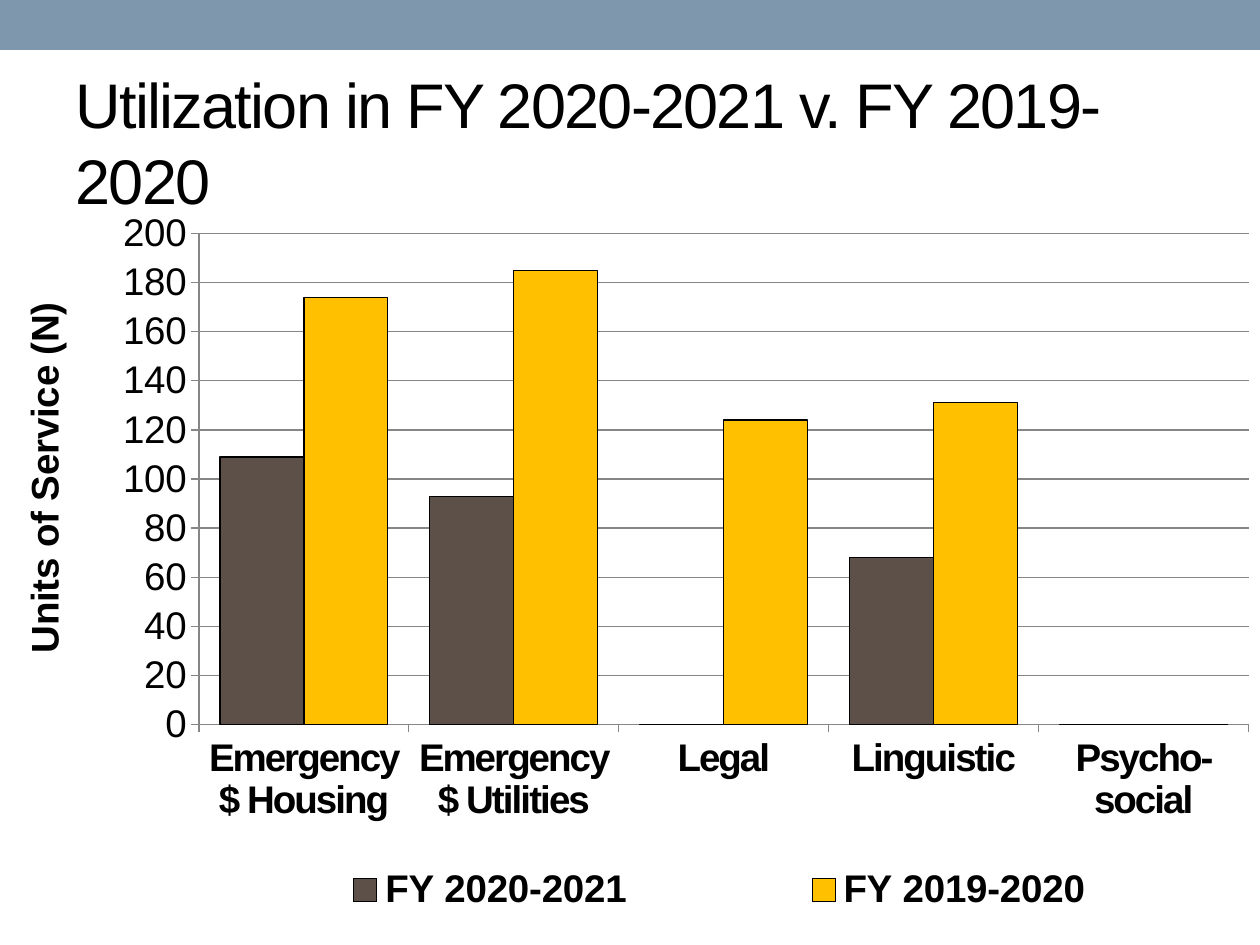
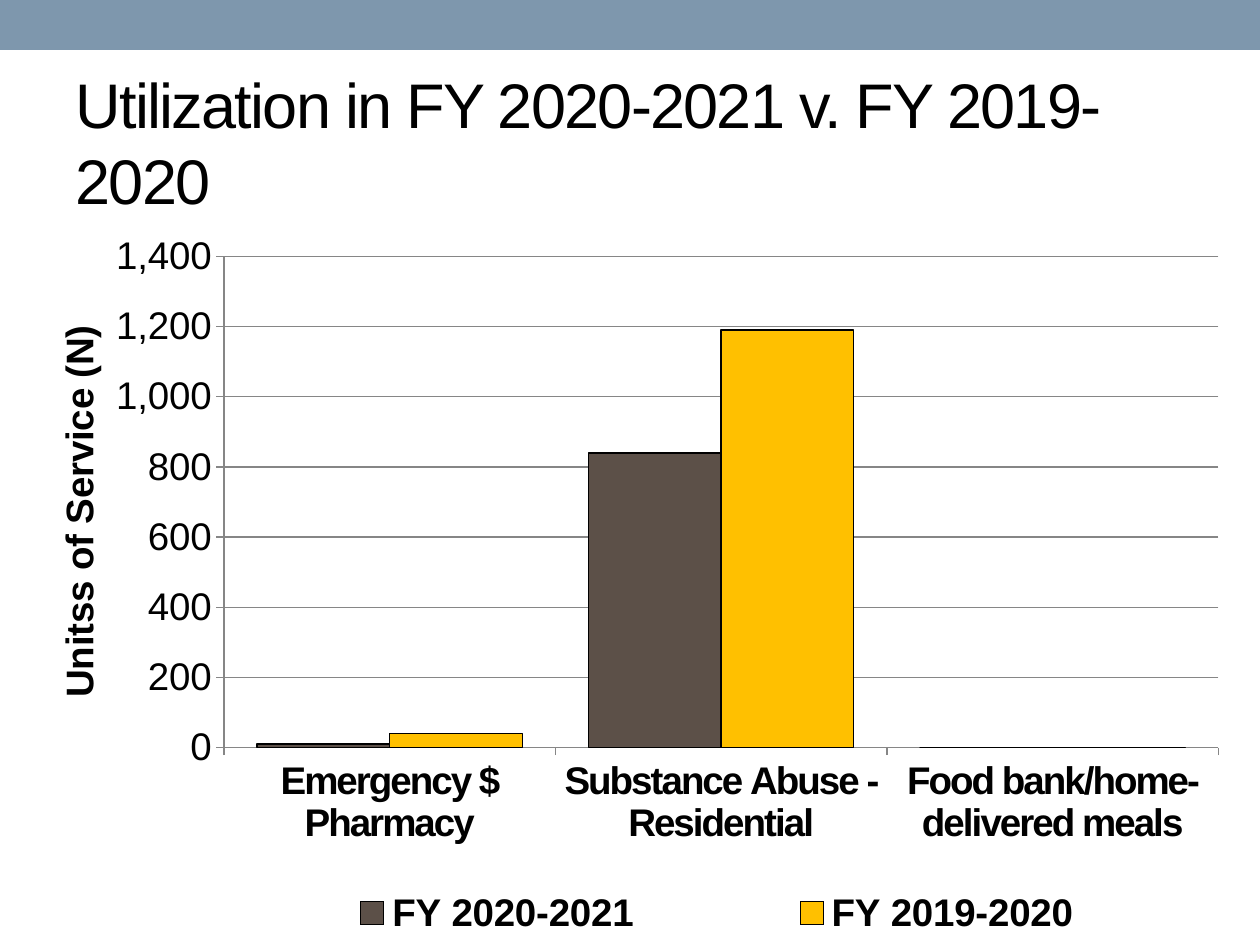
"""Builds two slides that compare service utilization across two fiscal years."""
import pptx
import pptx.chart.data
import pptx.dml.color
import pptx.enum.chart
import pptx.enum.shapes
import pptx.enum.text
import pptx.oxml
import pptx.util

TITLE = "Utilization in FY 2020-2021 v. FY 2019-2020"
YEARS = [("FY 2020-2021", "5C5048"), ("FY 2019-2020", "FFC000")]
SLIDES = [
    {
        "box": (-10, 210, 1274, 712),
        "axis": "Units of Service (N)",
        "top": 200,
        "step": 20,
        "services": [
            ("Emergency $ Housing", 109, 174),
            ("Emergency $ Utilities", 93, 185),
            ("Legal", 0, 124),
            ("Linguistic", 68, 131),
            ("Psycho- social", 0, 0),
        ],
    },
    {
        "box": (26, 233, 1207, 712),
        "axis": "Unitss of Service (N)",
        "top": 1400,
        "step": 200,
        "services": [
            ("Emergency $ Pharmacy", 10, 40),
            ("Substance Abuse - Residential", 840, 1190),
            ("Food bank/home-delivered meals", 0, 0),
        ],
    },
]
BAND, BLACK, GRID = "7E97AD", "000000", "868686"
BAND_BOX = (0, 0, 1260, 50)
TITLE_BOX = (63, 73, 1134, 136)
PLOT = {"x": 0.164, "y": 0.033, "w": 0.824, "h": 0.69}
LEGEND = {"x": 0.15, "y": 0.91, "w": 0.845, "h": 0.09}
AXIS_TITLE = {"x": 0.018, "y": 0.12}
PX_PER_INCH = 126


def px(*lengths):
    return [pptx.util.Emu(round(n * 914400 / PX_PER_INCH)) for n in lengths]


def color(value):
    return pptx.dml.color.RGBColor.from_string(value)


def set_font(font, size, bold=False, spacing=0):
    font.name = "Arial"
    font.size = pptx.util.Pt(size)
    font.bold = bold
    font.color.rgb = color(BLACK)
    if spacing:
        font._element.set("spc", str(spacing))


def set_line(line, value):
    line.color.rgb = color(value)
    line.width = pptx.util.Pt(0.75)


def add_band(slide):
    band = slide.shapes.add_shape(pptx.enum.shapes.MSO_SHAPE.RECTANGLE, *px(*BAND_BOX))
    band.shadow.inherit = False
    band.fill.solid()
    band.fill.fore_color.rgb = color(BAND)
    band.line.fill.background()


def add_title(slide):
    title = slide.shapes.title
    title.left, title.top, title.width, title.height = px(*TITLE_BOX)
    frame = title.text_frame
    frame.text = TITLE
    frame.word_wrap = True
    frame.auto_size = pptx.enum.text.MSO_AUTO_SIZE.NONE
    frame.vertical_anchor = pptx.enum.text.MSO_ANCHOR.MIDDLE
    paragraph = frame.paragraphs[0]
    paragraph.alignment = pptx.enum.text.PP_ALIGN.LEFT
    set_font(paragraph.font, 36)
    paragraph.runs[0].font._element.set("spc", "-100")


def place(parent, shares, before=None, target=""):
    """Give a chart part a manual layout, in shares of the chart's size."""
    qn = pptx.oxml.ns.qn
    for old in parent.findall(qn("c:layout")):
        parent.remove(old)
    sides = "".join(f'<c:{side} val="{share}"/>' for side, share in shares.items())
    layout = pptx.oxml.parse_xml(
        f'<c:layout {pptx.oxml.ns.nsdecls("c")}><c:manualLayout>{target}'
        f'<c:xMode val="edge"/><c:yMode val="edge"/>{sides}</c:manualLayout></c:layout>')
    if before:
        parent.find(qn(before)).addprevious(layout)
    else:
        parent.insert(0, layout)


def add_utilization(slide, content):
    names, *counts = zip(*content["services"])
    data = pptx.chart.data.CategoryChartData()
    data.categories = names
    for (year, _), values in zip(YEARS, counts):
        data.add_series(year, values)
    kind = pptx.enum.chart.XL_CHART_TYPE.COLUMN_CLUSTERED
    chart = slide.shapes.add_chart(kind, *px(*content["box"]), data).chart
    chart.has_title = False
    set_font(chart.font, 22)
    place(chart._chartSpace.chart.plotArea, PLOT, target='<c:layoutTarget val="inner"/>')

    plot = chart.plots[0]
    plot.gap_width = 50
    plot.overlap = 0
    plot.vary_by_categories = False
    for series, (_, fill) in zip(plot.series, YEARS):
        series.format.fill.solid()
        series.format.fill.fore_color.rgb = color(fill)
        set_line(series.format.line, BLACK)

    services, units = chart.category_axis, chart.value_axis
    for axis in (services, units):
        axis.major_tick_mark = pptx.enum.chart.XL_TICK_MARK.OUTSIDE
        set_line(axis.format.line, GRID)
    set_font(services.tick_labels.font, 22, True, -100)
    label_body = services._element.find(pptx.oxml.ns.qn("c:txPr"))[0]
    label_body.set("rot", "0")
    label_body.set("vert", "horz")
    set_font(units.tick_labels.font, 22)
    units.tick_labels.number_format = "#,##0"
    units.tick_labels.number_format_is_linked = False
    units.minimum_scale, units.maximum_scale = 0, content["top"]
    units.major_unit = content["step"]
    set_line(units.major_gridlines.format.line, GRID)
    units.axis_title.text_frame.text = content["axis"]
    set_font(units.axis_title.text_frame.paragraphs[0].font, 22, True)
    place(units.axis_title._element, AXIS_TITLE, "c:overlay")

    chart.has_legend = True
    chart.legend.position = pptx.enum.chart.XL_LEGEND_POSITION.BOTTOM
    chart.legend.include_in_layout = False
    set_font(chart.legend.font, 22, True)
    place(chart.legend._element, LEGEND, "c:overlay")


def main():
    deck = pptx.Presentation()
    deck.slide_width, deck.slide_height = px(1260, 945)
    for content in SLIDES:
        slide = deck.slides.add_slide(deck.slide_layouts[5])
        add_band(slide)
        add_title(slide)
        add_utilization(slide, content)
    deck.save("out.pptx")


if __name__ == "__main__":
    main()
